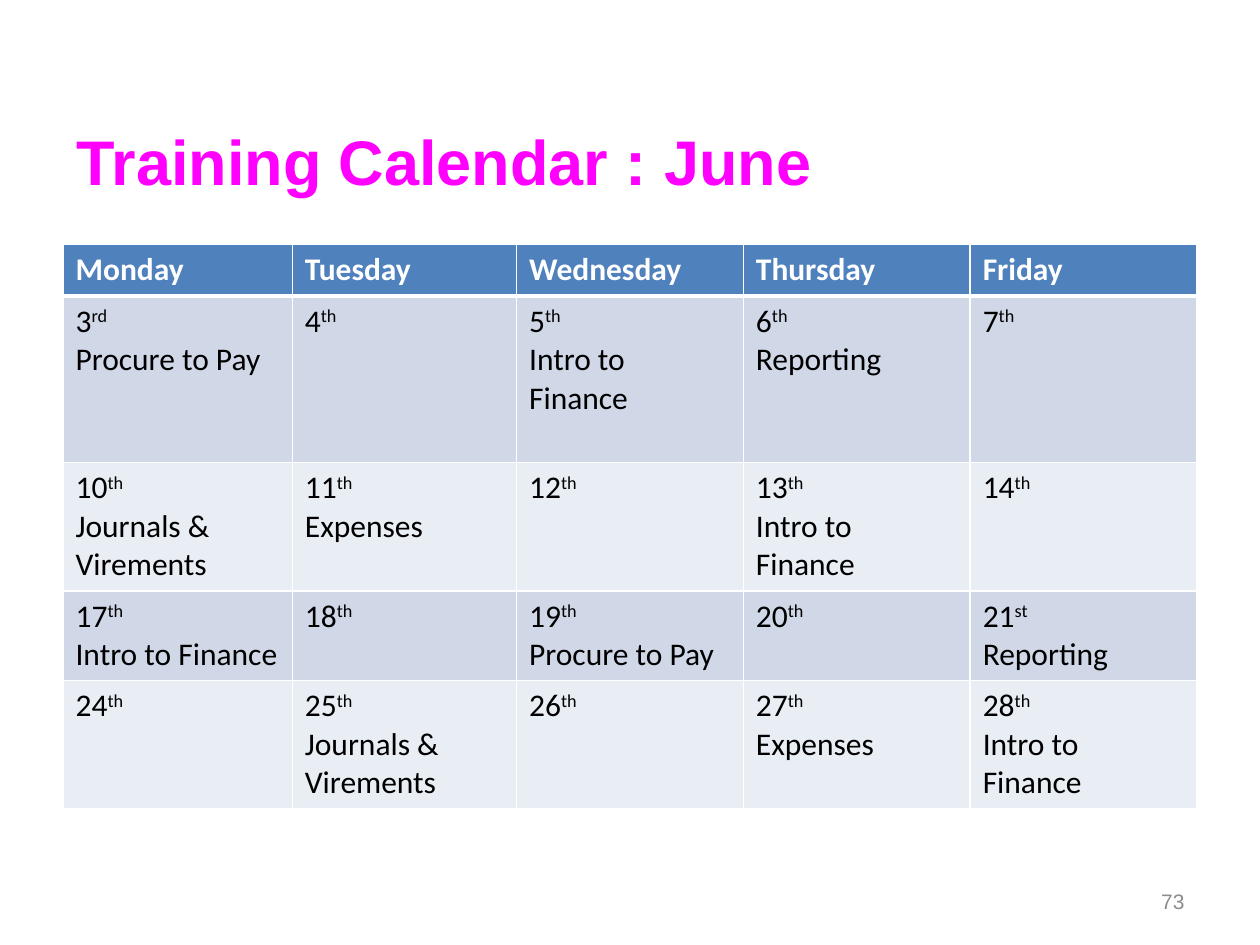
from dataclasses import dataclass

from lxml.etree import SubElement
from pptx import Presentation
from pptx.dml.color import RGBColor
from pptx.enum.text import MSO_ANCHOR as Anchor, PP_ALIGN as Align
from pptx.oxml.ns import qn
from pptx.util import Inches, Pt

WHITE = RGBColor(0xFF, 0xFF, 0xFF)
BLACK = RGBColor(0x00, 0x00, 0x00)
MAGENTA = RGBColor(0xFF, 0x00, 0xFF)
GREY = RGBColor(0x8C, 0x8C, 0x8C)
HEADER_BLUE = RGBColor(0x4F, 0x81, 0xBD)
BANDS = (RGBColor(0xD0, 0xD8, 0xE8), RGBColor(0xE9, 0xED, 0xF4))

WEEKDAYS = ("Monday", "Tuesday", "Wednesday", "Thursday", "Friday")
COLUMN_WIDTHS = (1.82, 1.78, 1.8, 1.8, 1.8)
HEADER_HEIGHT = 0.41


@dataclass
class Week:
    monday: int
    height: float
    courses: tuple[str, ...]


WEEKS = (
    Week(3, 1.32, ("Procure to Pay", "", "Intro to Finance", "Reporting", "")),
    Week(10, 1.02, ("Journals & Virements", "Expenses", "", "Intro to Finance", "")),
    Week(17, 0.71, ("Intro to Finance", "", "Procure to Pay", "", "Reporting")),
    Week(24, 1.01, ("", "Journals & Virements", "", "Expenses", "Intro to Finance")),
)


def ordinal_suffix(day: int) -> str:
    if 11 <= day <= 13:
        return "th"
    return {1: "st", 2: "nd", 3: "rd"}.get(day % 10, "th")


def add_text(para, text: str, *, size: float = 18, font: str = "Calibri",
             color: RGBColor = BLACK, bold: bool = False, raised: bool = False) -> None:
    span = para.add_run()
    span.text = text
    span.font.size = Pt(size)
    span.font.name = font
    span.font.color.rgb = color
    span.font.bold = bold
    if raised:
        span.font._element.set("baseline", "30000")


def style_cell(cell, fill: RGBColor, top: float = 1, bottom: float = 1) -> None:
    """Give the cell white borders (in points) and a solid fill."""
    properties = cell._tc.get_or_add_tcPr()
    for side, width in (("L", 1), ("R", 1), ("T", top), ("B", bottom)):
        line = SubElement(properties, qn(f"a:ln{side}"), w=str(Pt(width)))
        solid = SubElement(line, qn("a:solidFill"))
        SubElement(solid, qn("a:srgbClr"), val=str(WHITE))
    cell.fill.solid()
    cell.fill.fore_color.rgb = fill


def fill_day(cell, day: int, course: str) -> None:
    para = cell.text_frame.paragraphs[0]
    add_text(para, str(day))
    add_text(para, ordinal_suffix(day), raised=True)
    if course:
        add_text(cell.text_frame.add_paragraph(), course)


def add_calendar(page) -> None:
    heights = (HEADER_HEIGHT, *(week.height for week in WEEKS))
    frame = page.shapes.add_table(len(heights), len(WEEKDAYS), Inches(0.5), Inches(1.94),
                                  Inches(sum(COLUMN_WIDTHS)), Inches(sum(heights)))
    table = frame.table
    for column, width in zip(table.columns, COLUMN_WIDTHS):
        column.width = Inches(width)
    for row, height in zip(table.rows, heights):
        row.height = Inches(height)

    for column, weekday in enumerate(WEEKDAYS):
        cell = table.cell(0, column)
        style_cell(cell, HEADER_BLUE, bottom=3)
        add_text(cell.text_frame.paragraphs[0], weekday, color=WHITE, bold=True)

    for index, week in enumerate(WEEKS):
        for offset, course in enumerate(week.courses):
            cell = table.cell(index + 1, offset)
            style_cell(cell, BANDS[index % 2], top=3 if index == 0 else 1)
            fill_day(cell, week.monday + offset, course)


def main() -> None:
    deck = Presentation()
    deck.slide_width, deck.slide_height = Inches(10), Inches(7.5)
    page = deck.slides.add_slide(deck.slide_layouts[5])

    # Title
    title = page.shapes.title
    title.left, title.top = Inches(0.51), Inches(0.52)
    title.width, title.height = Inches(7.64), Inches(1.1)
    title.text_frame.vertical_anchor = Anchor.BOTTOM
    para = title.text_frame.paragraphs[0]
    para.alignment = Align.LEFT
    add_text(para, "Training Calendar : June", size=36, font="Arial", color=MAGENTA, bold=True)

    # Calendar
    add_calendar(page)

    # Page number
    box = page.shapes.add_textbox(Inches(7.17), Inches(6.95), Inches(2.33), Inches(0.4))
    box.text_frame.word_wrap = True
    box.text_frame.vertical_anchor = Anchor.MIDDLE
    para = box.text_frame.paragraphs[0]
    para.alignment = Align.RIGHT
    add_text(para, "73", size=12, font="Arial", color=GREY)

    deck.save("out.pptx")


if __name__ == "__main__":
    main()
